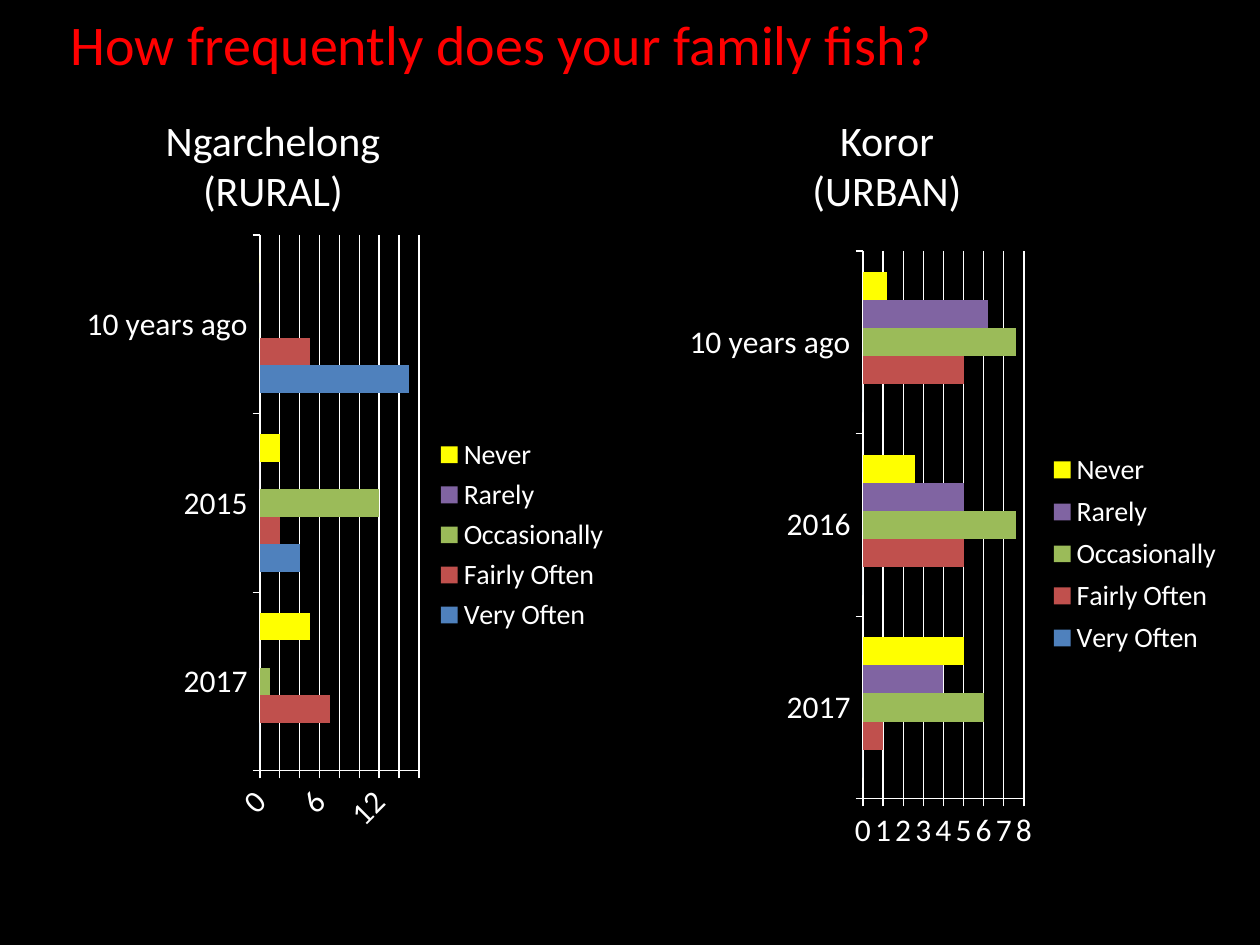
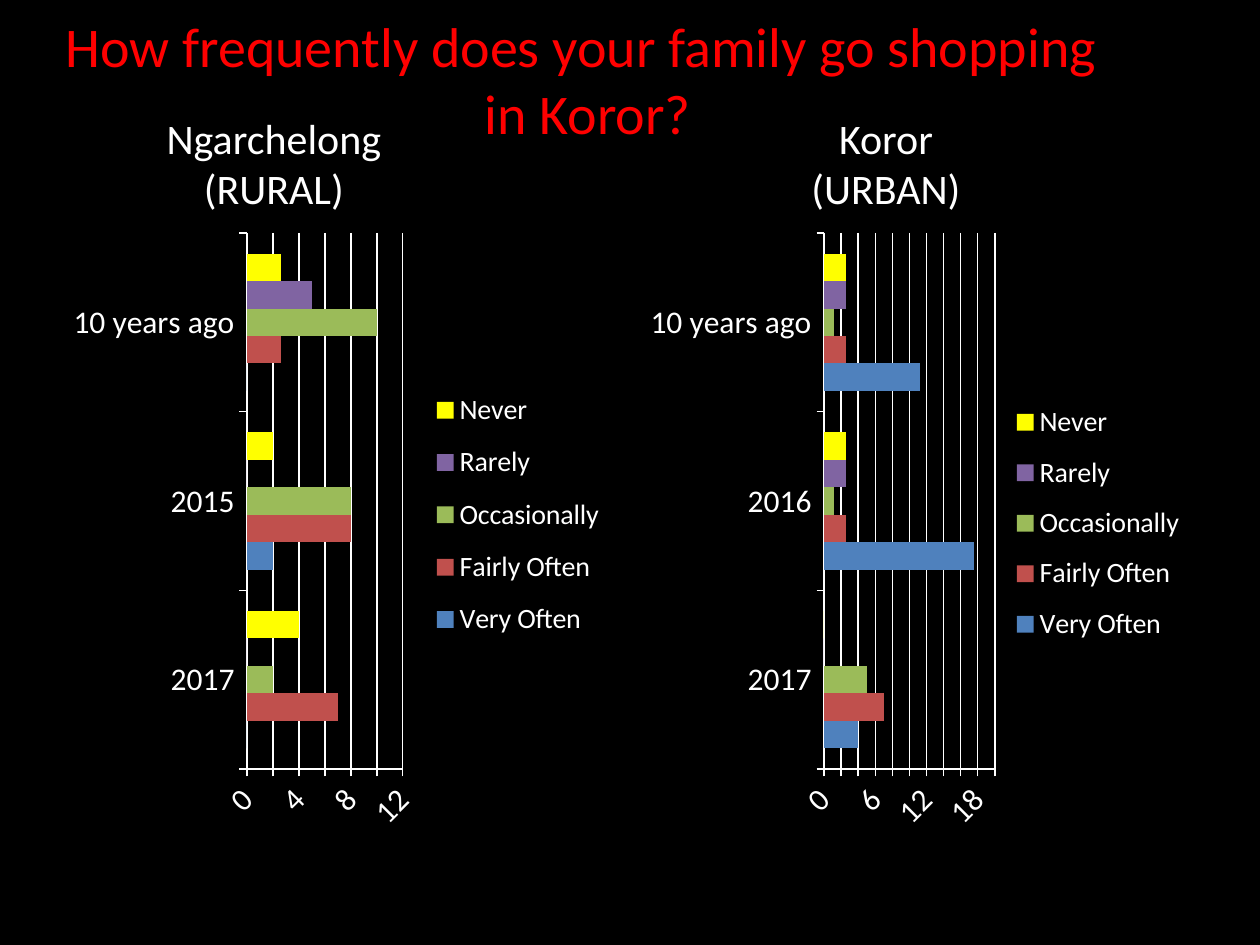
from dataclasses import dataclass

from lxml import etree
from pptx import Presentation
from pptx.chart.data import CategoryChartData
from pptx.dml.color import RGBColor
from pptx.enum.chart import XL_CHART_TYPE, XL_LEGEND_POSITION, XL_TICK_MARK
from pptx.enum.text import MSO_ANCHOR, PP_ALIGN
from pptx.oxml.ns import qn
from pptx.util import Emu, Pt

PX_PER_INCH = 126
FONT = "Calibri"
BLACK = RGBColor(0x00, 0x00, 0x00)
WHITE = RGBColor(0xFF, 0xFF, 0xFF)
RED = RGBColor(0xFF, 0x00, 0x00)
ANSWER_COLORS = {
    "Very Often": RGBColor(0x4F, 0x81, 0xBD),
    "Fairly Often": RGBColor(0xC0, 0x50, 0x4D),
    "Occasionally": RGBColor(0x9B, 0xBB, 0x59),
    "Rarely": RGBColor(0x80, 0x64, 0xA2),
    "Never": RGBColor(0xFF, 0xFF, 0x00),
}
RURAL_YEARS = ["2017", "2015", "10 years ago"]
URBAN_YEARS = ["2017", "2016", "10 years ago"]
RURAL = ["Ngarchelong", "(RURAL)"]
URBAN = ["Koror", "(URBAN)"]


@dataclass
class Survey:
    """Answers of one community; boxes are (left, top, width, height) in px.

    Each row of answers holds one value per year, in the order of ANSWER_COLORS.
    """
    years: list
    answers: list
    frame: tuple
    plot: tuple
    legend: tuple
    axis_max: int
    axis_step: int = 2
    slanted: bool = True


def px(length):
    return Emu(round(length * 914400 / PX_PER_INCH))


def style_text(text_frame, size, color, align):
    for paragraph in text_frame.paragraphs:
        paragraph.alignment = align
        for run in paragraph.runs:
            run.font.name = FONT
            run.font.size = Pt(size)
            run.font.color.rgb = color


def add_question_slide(prs, question, box, align, anchor):
    slide = prs.slides.add_slide(prs.slide_layouts[5])
    title = slide.shapes.title
    title.left, title.top, title.width, title.height = map(px, box)
    title.text_frame.text = question
    title.text_frame.vertical_anchor = anchor
    style_text(title.text_frame, 32, RED, align)
    return slide


def add_community(slide, lines, box):
    heading = slide.shapes.add_textbox(*map(px, box)).text_frame
    heading.word_wrap = True
    heading.text = "\n".join(lines)
    style_text(heading, 24, WHITE, PP_ALIGN.CENTER)


def place_in_chart(element, index, box, frame, inner=False):
    """Give a plot area or legend a fixed place, as fractions of the chart frame."""
    for old in element.findall(qn("c:layout")):
        element.remove(old)
    layout = etree.Element(qn("c:layout"))
    manual = etree.SubElement(layout, qn("c:manualLayout"))
    left, top, width, height = frame
    settings = {"layoutTarget": "inner"} if inner else {}
    settings |= {
        "xMode": "edge",
        "yMode": "edge",
        "x": round((box[0] - left) / width, 4),
        "y": round((box[1] - top) / height, 4),
        "w": round(box[2] / width, 4),
        "h": round(box[3] / height, 4),
    }
    for tag, value in settings.items():
        etree.SubElement(manual, qn(f"c:{tag}")).set("val", str(value))
    element.insert(index, layout)


def style_line(line):
    line.color.rgb = WHITE
    line.width = Pt(0.75)


def style_font(font, size):
    font.name = FONT
    font.size = Pt(size)
    font.color.rgb = WHITE


def style_axes(chart, survey):
    for axis in (chart.category_axis, chart.value_axis):
        axis.major_tick_mark = XL_TICK_MARK.OUTSIDE
        axis.minor_tick_mark = XL_TICK_MARK.NONE
        style_line(axis.format.line)
        style_font(axis.tick_labels.font, 18)
    counts = chart.value_axis
    counts.minimum_scale = 0
    counts.maximum_scale = survey.axis_max
    counts.major_unit = survey.axis_step
    counts.has_major_gridlines = True
    style_line(counts.major_gridlines.format.line)
    if survey.slanted:
        counts._element.find(f"{qn('c:txPr')}/{qn('a:bodyPr')}").set("rot", "-2700000")


def add_survey_chart(slide, survey):
    data = CategoryChartData()
    data.categories = survey.years
    for answer, values in zip(ANSWER_COLORS, survey.answers):
        data.add_series(answer, values)
    chart = slide.shapes.add_chart(
        XL_CHART_TYPE.BAR_CLUSTERED, *map(px, survey.frame), data).chart
    chart.has_title = False
    style_font(chart.font, 18)
    style_axes(chart, survey)

    bars = chart.plots[0]
    bars.gap_width = 150
    bars.vary_by_categories = False
    for series, color in zip(bars.series, ANSWER_COLORS.values()):
        series.format.fill.solid()
        series.format.fill.fore_color.rgb = color

    chart.has_legend = True
    legend = chart.legend
    legend.position = XL_LEGEND_POSITION.RIGHT
    legend.include_in_layout = False
    style_font(legend.font, 16)
    place_in_chart(legend._element, 1, survey.legend, survey.frame)
    place_in_chart(chart._chartSpace.chart.plotArea, 0, survey.plot, survey.frame, inner=True)


def add_fishing_slide(prs):
    slide = add_question_slide(
        prs, "How frequently does your family fish?",
        (58, 3, 992, 81), PP_ALIGN.LEFT, MSO_ANCHOR.TOP)
    add_survey_chart(slide, Survey(
        RURAL_YEARS,
        [(0, 4, 15), (7, 2, 5), (1, 12, 0), (0, 0, 0), (5, 2, 0)],
        frame=(76, 223, 546, 624), plot=(260, 235, 159, 536),
        legend=(432, 432, 180, 206), axis_max=16))
    add_survey_chart(slide, Survey(
        URBAN_YEARS,
        [(0, 0, 0), (1, 5, 5), (6, 7.6, 7.6), (4, 5, 6.2), (5, 2.6, 1.2)],
        frame=(679, 239, 557, 624), plot=(863, 251, 161, 548),
        legend=(1045, 445, 180, 218), axis_max=8, axis_step=1, slanted=False))
    add_community(slide, RURAL, (76, 108, 394, 115))
    add_community(slide, URBAN, (719, 108, 336, 115))


def add_shopping_slide(prs):
    slide = add_question_slide(
        prs, "How frequently does your family go shopping\v in Koror?",
        (-68, 0, 1299, 158), PP_ALIGN.CENTER, MSO_ANCHOR.MIDDLE)
    add_survey_chart(slide, Survey(
        RURAL_YEARS,
        [(0, 2, 0), (7, 8, 2.6), (2, 8, 10), (0, 0, 5), (4, 2, 2.6)],
        frame=(63, 220, 557, 624), plot=(247, 233, 156, 536),
        legend=(428, 375, 180, 280), axis_max=12))
    add_survey_chart(slide, Survey(
        URBAN_YEARS,
        [(4, 17.6, 11.2), (7, 2.6, 2.6), (5, 1.2, 1.2), (0, 2.6, 2.6), (0, 2.6, 2.6)],
        frame=(640, 220, 557, 624), plot=(824, 233, 171, 536),
        legend=(1008, 389, 180, 269), axis_max=20))
    add_community(slide, RURAL, (134, 106, 280, 115))
    add_community(slide, URBAN, (718, 106, 336, 115))


def main():
    prs = Presentation()
    prs.slide_width, prs.slide_height = px(1260), px(945)
    backdrop = prs.slide_master.background.fill
    backdrop.solid()
    backdrop.fore_color.rgb = BLACK
    add_fishing_slide(prs)
    add_shopping_slide(prs)
    prs.save("out.pptx")


if __name__ == "__main__":
    main()
